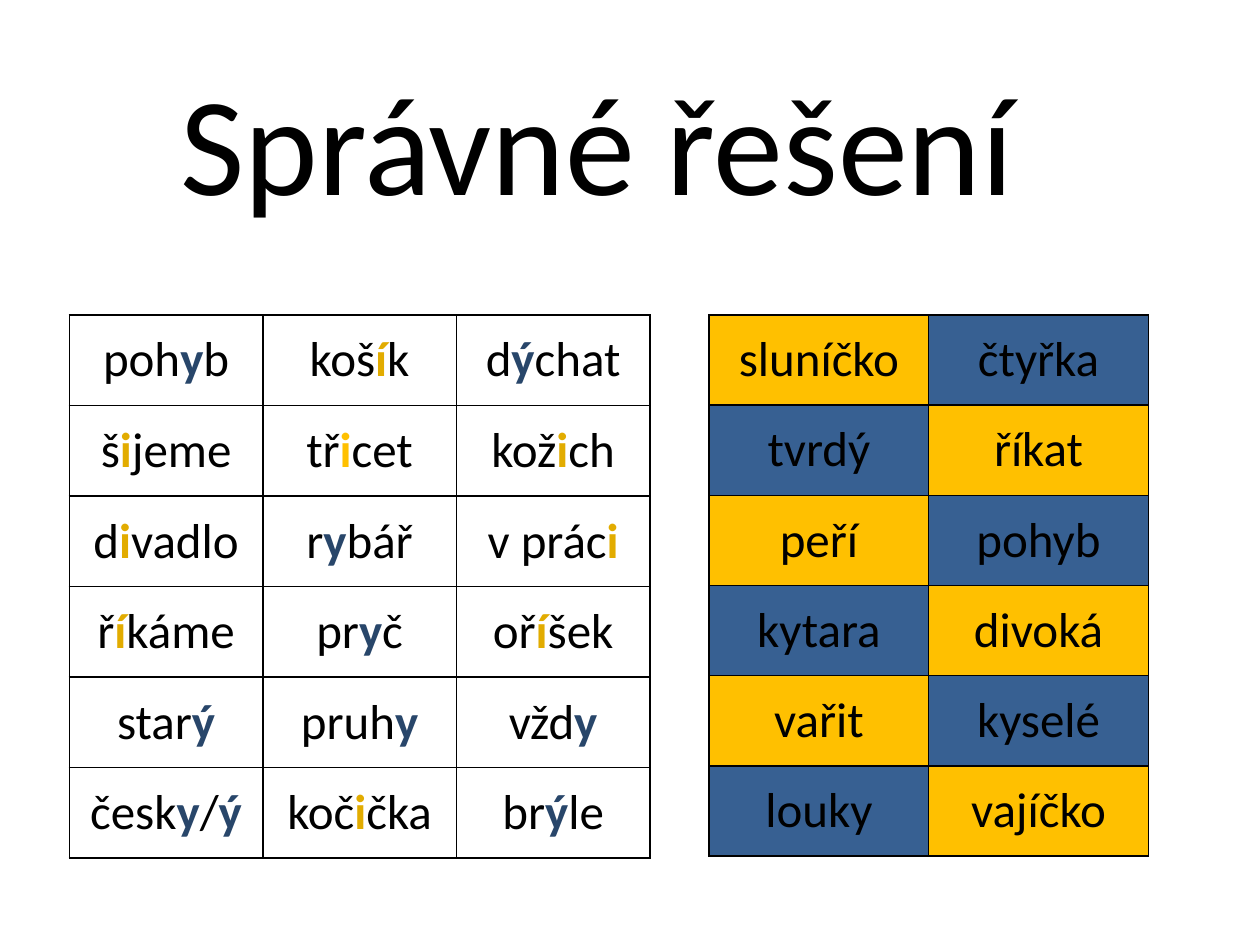
from pptx import Presentation
from pptx.dml.color import RGBColor
from pptx.enum.text import MSO_ANCHOR as Anchor, MSO_AUTO_SIZE as Auto, PP_ALIGN as Align
from pptx.oxml import parse_xml
from pptx.oxml.ns import nsdecls
from pptx.util import Pt

TITLE = "Správné řešení"
# Letters between asterisks are the highlighted answers.
ANSWERS = [
    ["poh*y*b", "koš*í*k", "d*ý*chat"],
    ["š*i*jeme", "tř*i*cet", "kož*i*ch"],
    ["d*i*vadlo", "r*y*bář", "v prác*i*"],
    ["ř*í*káme", "pr*y*č", "oř*í*šek"],
    ["star*ý*", "pruh*y*", "vžd*y*"],
    ["česk*y*/*ý*", "koč*i*čka", "br*ý*le"],
]
CHECKS = [
    ["sluníčko", "čtyřka"],
    ["tvrdý", "říkat"],
    ["peří", "pohyb"],
    ["kytara", "divoká"],
    ["vařit", "kyselé"],
    ["louky", "vajíčko"],
]
BLACK, GOLD, BLUE = "000000", "FFC000", "376092"
LETTERS = {"i": "E2AC00", "í": "E2AC00", "y": "28466A", "ý": "28466A"}
BRIGHT = "tř*i*cet"
TOP = 180


def color(code):
    return RGBColor.from_string(code)


def style(run, size, code=BLACK, bold=False):
    font = run.font
    font.name, font.size, font.bold = "Calibri", Pt(size), bold
    font.color.rgb = color(code)


def border(cell):
    props = cell._tc.get_or_add_tcPr()
    for side in "LRTB":
        props.append(parse_xml(
            f'<a:ln{side} {nsdecls("a")} w="{Pt(1)}"><a:solidFill>'
            f'<a:srgbClr val="{BLACK}"/></a:solidFill></a:ln{side}>'))


def write(cell, word):
    cell.vertical_anchor = Anchor.MIDDLE
    para = cell.text_frame.paragraphs[0]
    para.alignment = Align.CENTER
    for i, part in enumerate(word.split("*")):
        if not part:
            continue
        run = para.add_run()
        run.text = part
        if i % 2:
            style(run, 28, GOLD if word == BRIGHT else LETTERS[part], True)
        else:
            style(run, 28)


def grid(slide, words, left, wide, high, fills=None):
    """Add a word table; two fills alternate like a chessboard."""
    rows, cols = len(words), len(words[0])
    table = slide.shapes.add_table(
        rows, cols, Pt(left), Pt(TOP), Pt(wide * cols), Pt(high * rows)).table
    table.first_row = table.horz_banding = False
    for r, row in enumerate(words):
        for c, word in enumerate(row):
            cell = table.cell(r, c)
            write(cell, word)
            border(cell)
            if fills:
                cell.fill.solid()
                cell.fill.fore_color.rgb = color(fills[(r + c) % 2])
            else:
                cell.fill.background()


def main():
    deck = Presentation()
    deck.slide_width, deck.slide_height = Pt(720), Pt(540)
    slide = deck.slides.add_slide(deck.slide_layouts[6])
    grid(slide, ANSWERS, 39.6, 110.6, 51.75)
    grid(slide, CHECKS, 405.2, 125.5, 51.55, (GOLD, BLUE))

    frame = slide.shapes.add_textbox(Pt(96), Pt(28), Pt(518), Pt(104.4)).text_frame
    frame.word_wrap = True
    frame.auto_size = Auto.SHAPE_TO_FIT_TEXT
    frame.text = TITLE
    style(frame.paragraphs[0].runs[0], 80)
    deck.save("out.pptx")


if __name__ == "__main__":
    main()
